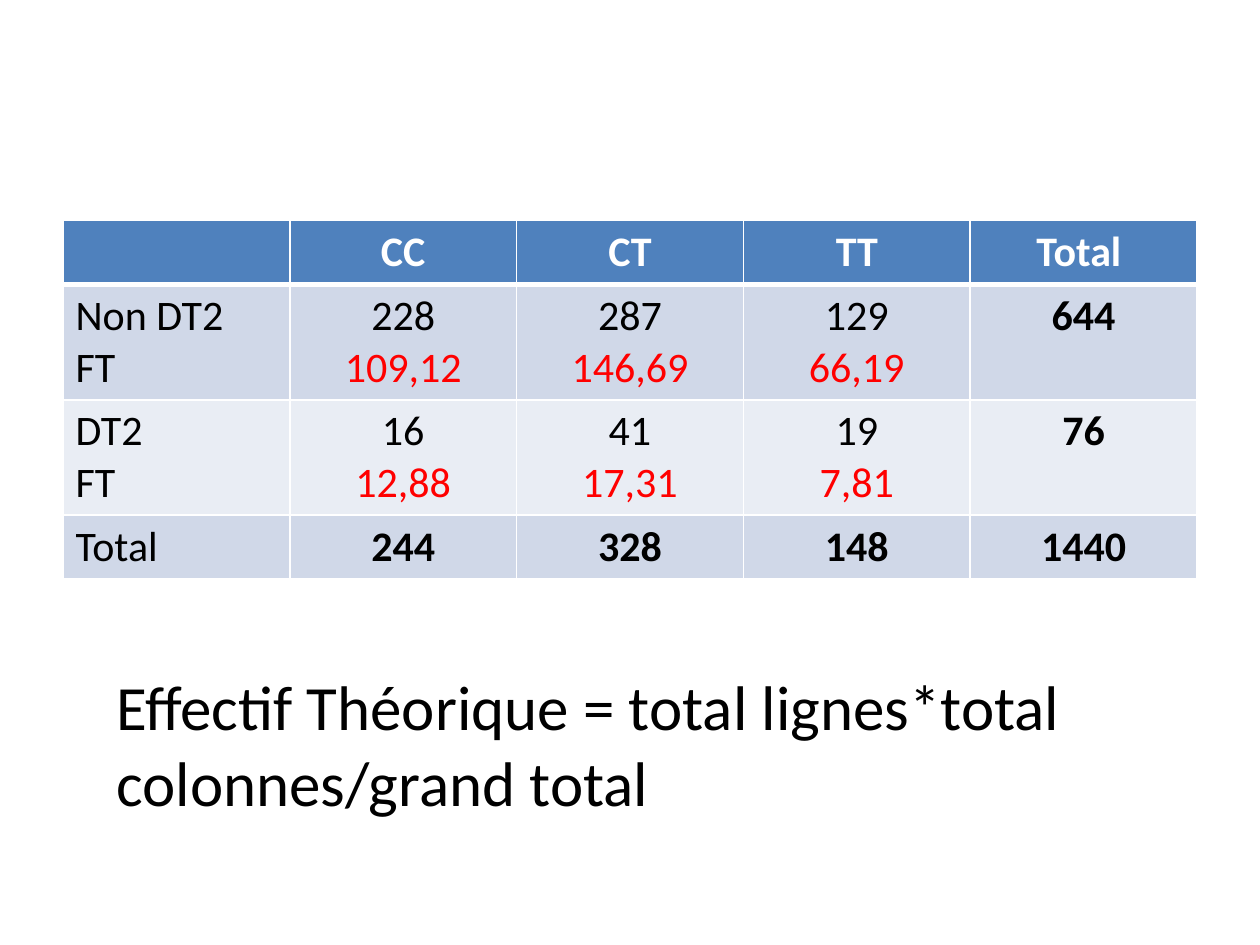
from pptx import Presentation
from pptx.dml.color import RGBColor
from pptx.enum.text import MSO_AUTO_SIZE, PP_ALIGN
from pptx.oxml.ns import qn
from pptx.util import Cm, Pt
from lxml import etree

WHITE = RGBColor(0xFF, 0xFF, 0xFF)
BLACK = RGBColor(0x00, 0x00, 0x00)
RED = RGBColor(0xFF, 0x00, 0x00)
BLUE = RGBColor(0x4F, 0x81, 0xBD)
BANDS = [RGBColor(0xE9, 0xED, 0xF4), RGBColor(0xD0, 0xD8, 0xE8)]
CENTER, LEFT = PP_ALIGN.CENTER, PP_ALIGN.LEFT
FIT = MSO_AUTO_SIZE.SHAPE_TO_FIT_TEXT
FONT = "Calibri"

ROWS = [
    ["", "CC", "CT", "TT", "Total "],
    ["Non DT2\nFT", "228\n109,12", "287\n146,69", "129\n66,19", "644"],
    ["DT2\nFT", "16\n12,88", "41\n17,31", "19\n7,81", "76"],
    ["Total", "244", "328", "148", "1440"],
]
HEIGHTS = [1.28, 2.32, 2.32, 1.28]
RULE = "Effectif Théorique = total lignes*total colonnes/grand total"


def style(para, size, color, bold=False):
    for run in para.runs:
        font = run.font
        font.name, font.size, font.bold = FONT, Pt(size), bold
        font.color.rgb = color


def edge(cell, base):
    """Draw white cell borders, with the given width at the bottom."""
    props = cell._tc.get_or_add_tcPr()
    for side, width in zip("LRTB", (1, 1, 1, base)):
        line = etree.SubElement(props, qn(f"a:ln{side}"), w=str(Pt(width)))
        fill = etree.SubElement(line, qn("a:solidFill"))
        etree.SubElement(fill, qn("a:srgbClr"), val=str(WHITE))


def add_counts(slide, left, top, width):
    """Observed counts, with the expected ones in red below."""
    last = len(ROWS[0]) - 1
    frame = slide.shapes.add_table(len(ROWS), last + 1, left, top,
                                   width, Cm(sum(HEIGHTS)))
    table = frame.table
    for r, texts in enumerate(ROWS):
        table.rows[r].height = Cm(HEIGHTS[r])
        head = r == 0
        for c, text in enumerate(texts):
            cell = table.cell(r, c)
            edge(cell, 3 if head else 1)
            cell.fill.solid()
            cell.fill.fore_color.rgb = BLUE if head else BANDS[r % 2]
            cell.text_frame.text = text
            total = c == last or (r == len(ROWS) - 1 and c > 0)
            for n, para in enumerate(cell.text_frame.paragraphs):
                para.alignment = CENTER if c else LEFT
                color = WHITE if head else RED if n and c else BLACK
                style(para, 24, color, head or total)


def add_rule(slide, left, top, width, height):
    """Formula for the expected counts."""
    frame = slide.shapes.add_textbox(left, top, width, height).text_frame
    frame.word_wrap = True
    frame.auto_size = FIT
    frame.text = RULE
    style(frame.paragraphs[0], 36, BLACK)


def main():
    deck = Presentation()
    deck.slide_width, deck.slide_height = Cm(25.4), Cm(19.05)
    slide = deck.slides.add_slide(deck.slide_layouts[6])
    add_counts(slide, Cm(1.27), Cm(4.45), Cm(22.86))
    add_rule(slide, Cm(2.1), Cm(13.34), Cm(21), Cm(3.33))
    deck.save("out.pptx")


if __name__ == "__main__":
    main()
